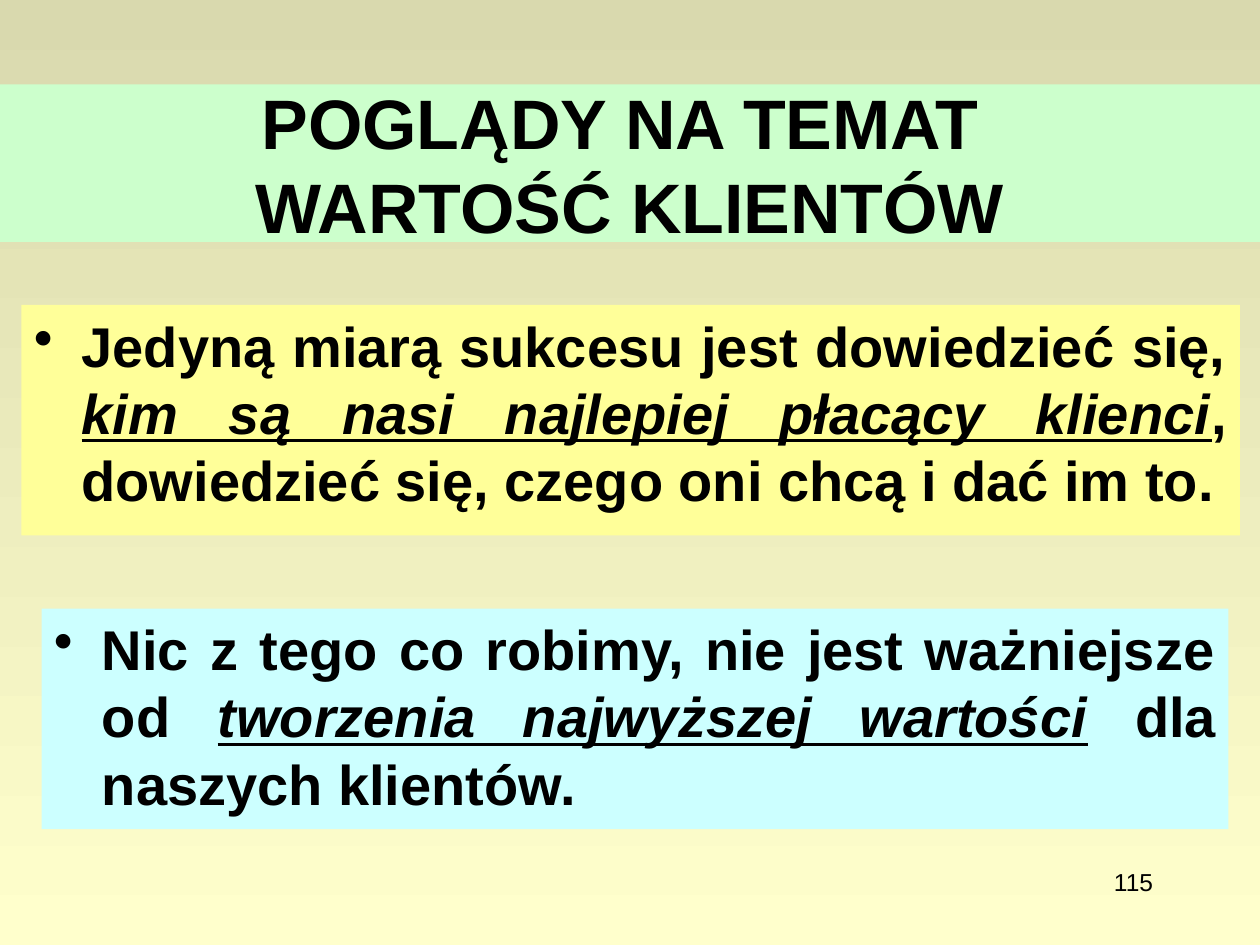
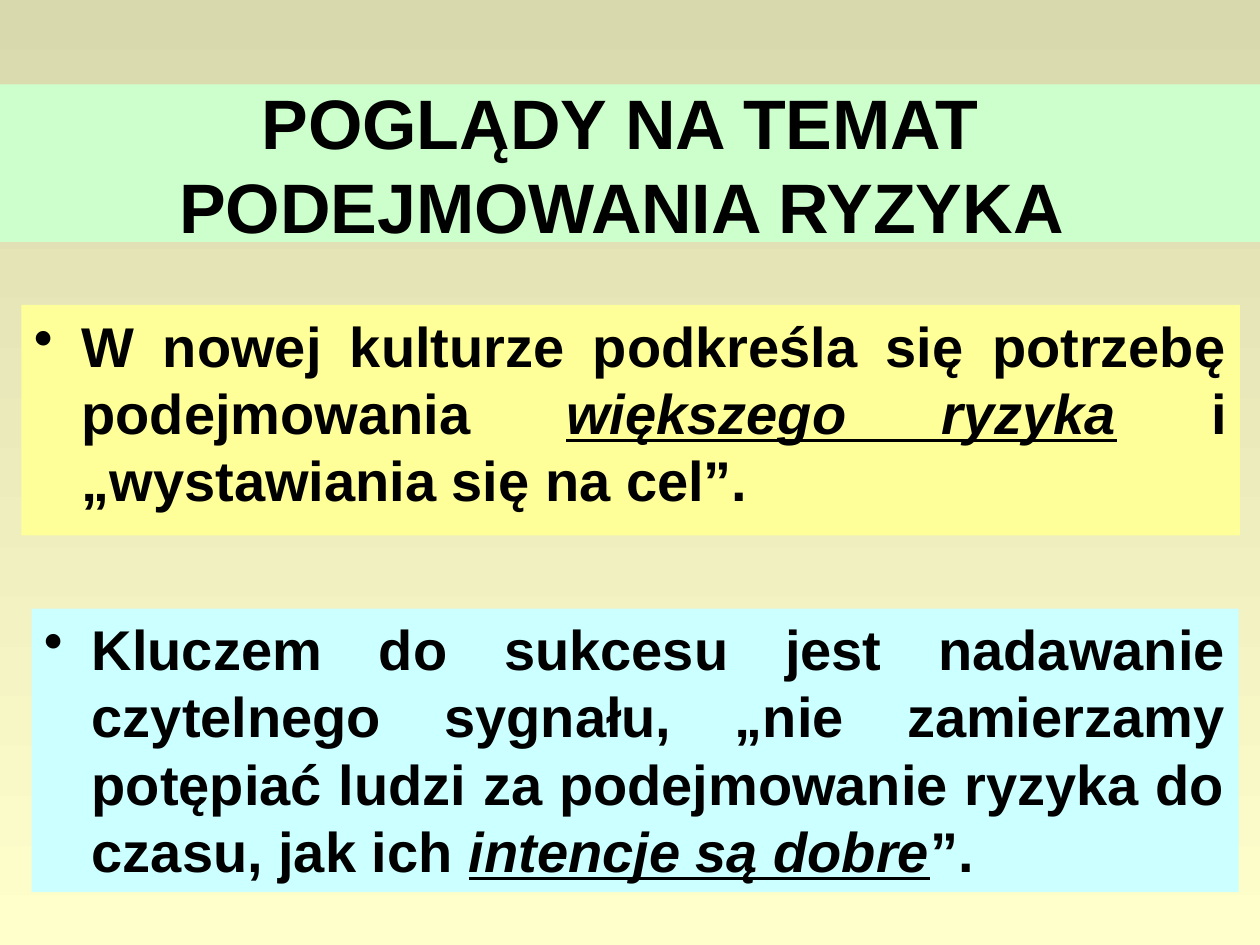
from dataclasses import dataclass

from lxml.etree import SubElement
from pptx import Presentation
from pptx.dml.color import RGBColor
from pptx.enum.shapes import MSO_SHAPE
from pptx.enum.text import MSO_ANCHOR, PP_ALIGN
from pptx.oxml.ns import qn
from pptx.util import Inches, Pt

# Content: (text, emphasised) runs; each answer box has its own place
SLIDES = [
    {
        "title": "POGLĄDY NA TEMAT \vWARTOŚĆ KLIENTÓW",
        "main": [
            ("Jedyną miarą sukcesu jest dowiedzieć się, ", False),
            ("kim są nasi najlepiej płacący klienci", True),
            (", dowiedzieć się, czego oni chcą i dać im to.", False),
        ],
        "second": [
            ("Nic z tego co robimy, nie jest ważniejsze od ", False),
            ("tworzenia najwyższej wartości", True),
            (" dla naszych klientów.", False),
        ],
        "second_box": (0.33, 4.83, 9.42, 1.75),
        "number": "115",
    },
    {
        "title": "POGLĄDY NA TEMAT \vPODEJMOWANIA RYZYKA ",
        "main": [
            ("W nowej kulturze podkreśla się potrzebę podejmowania ", False),
            ("większego ryzyka", True),
            (" i „wystawiania się na cel”. ", False),
        ],
        "second": [
            ("Kluczem do sukcesu jest nadawanie czytelnego sygnału, „nie "
             "zamierzamy potępiać ludzi za podejmowanie ryzyka do czasu, "
             "jak ich ", False),
            ("intencje są dobre", True),
            ("”.", False),
        ],
        "second_box": (0.25, 4.83, 9.58, 2.25),
        "number": None,
    },
]

# Shared places, in inches: left, top, width, height
TITLE_BOX = (0, 0.67, 10, 1.25)
MAIN_BOX = (0.17, 2.42, 9.67, 1.83)
NUMBER_BOX = (7.17, 6.83, 2.08, 0.5)
BULLET_INDENT = 0.38


@dataclass(frozen=True)
class Theme:
    font: str = "Arial"
    text: str = "000000"
    background_top: str = "D9D9AE"
    background_bottom: str = "FFFFCC"
    title_band: str = "CCFFCC"
    main_fill: str = "FFFF99"
    second_fill: str = "CCFFFF"
    title_size: int = 40
    body_size: int = 32
    number_size: int = 14


THEME = Theme()


def color(value):
    return RGBColor.from_string(value)


def style_paragraph(paragraph, size, alignment, bold=True):
    paragraph.alignment = alignment
    paragraph.font.name = THEME.font
    paragraph.font.size = Pt(size)
    paragraph.font.bold = bold
    paragraph.font.color.rgb = color(THEME.text)


def paint_background(slide):
    fill = slide.background.fill
    fill.gradient()
    fill.gradient_angle = 270
    ends = (THEME.background_top, THEME.background_bottom)
    for stop, value in zip(fill.gradient_stops, ends):
        stop.color.rgb = color(value)


def add_panel(slide, box, fill, anchor):
    """Add a plain filled rectangle and return its text frame."""
    shape = slide.shapes.add_shape(MSO_SHAPE.RECTANGLE, *map(Inches, box))
    shape.shadow.inherit = False
    shape.fill.solid()
    shape.fill.fore_color.rgb = color(fill)
    shape.line.fill.background()
    shape.text_frame.word_wrap = True
    shape.text_frame.vertical_anchor = anchor
    return shape.text_frame


def add_title(slide, title):
    frame = add_panel(slide, TITLE_BOX, THEME.title_band, MSO_ANCHOR.MIDDLE)
    paragraph = frame.paragraphs[0]
    paragraph.text = title
    style_paragraph(paragraph, THEME.title_size, PP_ALIGN.CENTER)


def add_bullet_panel(slide, box, fill, runs):
    frame = add_panel(slide, box, fill, MSO_ANCHOR.TOP)
    paragraph = frame.paragraphs[0]
    for text, emphasised in runs:
        run = paragraph.add_run()
        run.text = text
        if emphasised:
            run.font.italic = run.font.underline = True
    style_paragraph(paragraph, THEME.body_size, PP_ALIGN.JUSTIFY)
    paragraph.space_before = Pt(THEME.body_size * 0.2)

    # Hanging bullet, placed ahead of the default run properties
    properties = paragraph._p.get_or_add_pPr()
    properties.set("marL", str(Inches(BULLET_INDENT)))
    properties.set("indent", str(-Inches(BULLET_INDENT)))
    bullet = SubElement(properties, qn("a:buChar"), char="•")
    properties.find(qn("a:defRPr")).addprevious(bullet)


def add_number(slide, number):
    frame = slide.shapes.add_textbox(*map(Inches, NUMBER_BOX)).text_frame
    frame.word_wrap = True
    paragraph = frame.paragraphs[0]
    paragraph.text = number
    style_paragraph(paragraph, THEME.number_size, PP_ALIGN.RIGHT, bold=False)


def main():
    presentation = Presentation()
    presentation.slide_width = Inches(10)
    presentation.slide_height = Inches(7.5)
    blank_layout = presentation.slide_layouts[6]

    for content in SLIDES:
        slide = presentation.slides.add_slide(blank_layout)
        paint_background(slide)
        if content["number"]:
            add_number(slide, content["number"])
        add_title(slide, content["title"])
        add_bullet_panel(slide, MAIN_BOX, THEME.main_fill, content["main"])
        add_bullet_panel(slide, content["second_box"], THEME.second_fill,
                         content["second"])

    presentation.save("out.pptx")


if __name__ == "__main__":
    main()
